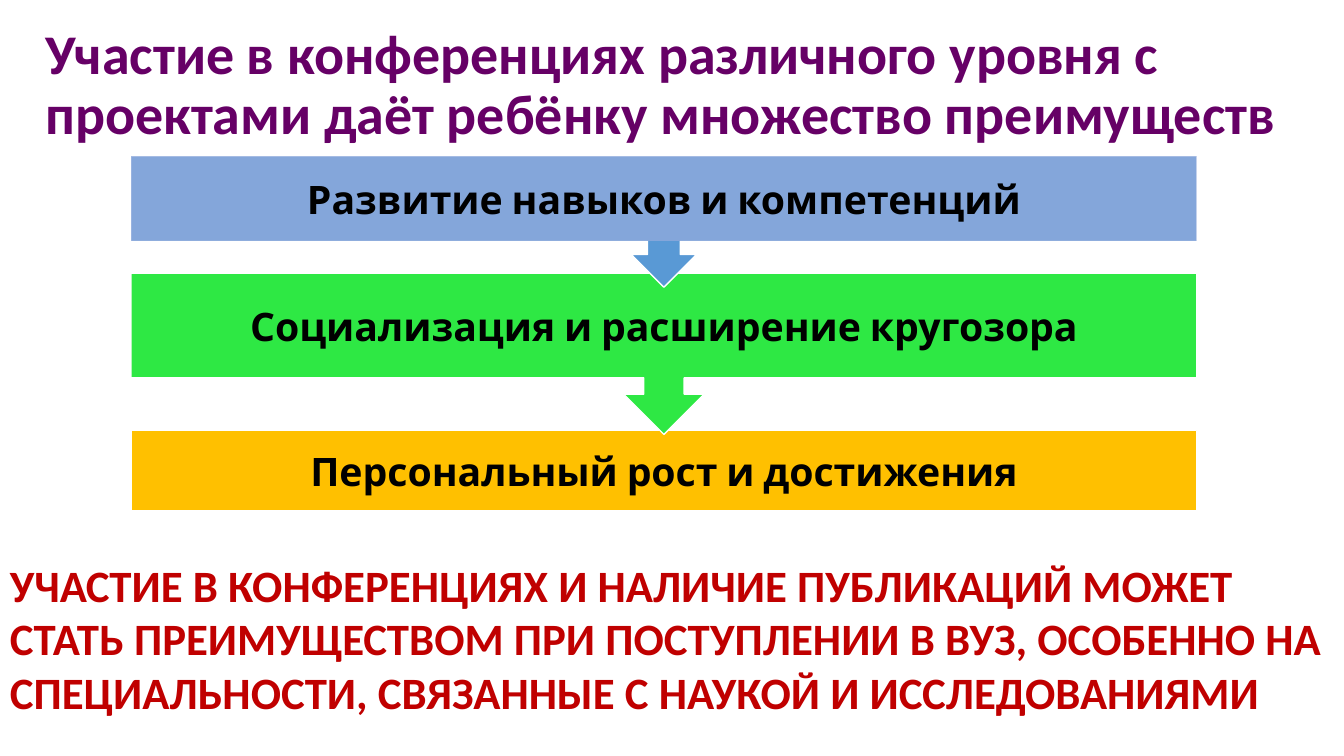
from dataclasses import dataclass
from pptx import Presentation
from pptx.dml.color import RGBColor
from pptx.enum.shapes import MSO_SHAPE
from pptx.enum.text import MSO_ANCHOR, MSO_AUTO_SIZE, PP_ALIGN
from pptx.oxml import parse_xml
from pptx.oxml.ns import nsdecls
from pptx.shapes.autoshape import Shape
from pptx.slide import Slide
from pptx.text.text import TextFrame
from pptx.util import Inches, Length, Pt

LEFT = 13
WIDTH = 105.7


@dataclass
class Step:
    top: float
    height: float
    kind: MSO_SHAPE
    fill: str
    text: str = ""
    alpha: int = 100


@dataclass
class Note:
    left: float
    top: float
    width: float
    height: float
    size: int
    color: str
    spacing: float
    fit: MSO_AUTO_SIZE
    text: str


STEPS = [
    Step(42.7, 8, MSO_SHAPE.RECTANGLE, "FFC000",
         "Персональный рост и достижения"),
    Step(27.1, 16, MSO_SHAPE.DOWN_ARROW_CALLOUT, "2EE844",
         "Социализация и расширение кругозора"),
    Step(15.5, 13, MSO_SHAPE.DOWN_ARROW_CALLOUT, "5999D5"),
    Step(15.5, 8.4, MSO_SHAPE.RECTANGLE, "8FAADC",
         "Развитие навыков и компетенций", 80),
]

TITLE = Note(3.5, 2.1, 127.1, 47.6, 40, "660066", 0.9, MSO_AUTO_SIZE.NONE,
             "Участие в конференциях различного уровня с проектами "
             "даёт ребёнку множество преимуществ")
CLOSING = Note(0, 54.8, 135.5, 20.2, 32, "C00000", 1.0,
               MSO_AUTO_SIZE.SHAPE_TO_FIT_TEXT,
               "УЧАСТИЕ В КОНФЕРЕНЦИЯХ И НАЛИЧИЕ ПУБЛИКАЦИЙ МОЖЕТ СТАТЬ "
               "ПРЕИМУЩЕСТВОМ ПРИ ПОСТУПЛЕНИИ В ВУЗ, ОСОБЕННО НА "
               "СПЕЦИАЛЬНОСТИ, СВЯЗАННЫЕ С НАУКОЙ И ИССЛЕДОВАНИЯМИ")


def grid(count: float) -> Length:
    return Inches(count / 10)


def paint(code: str) -> RGBColor:
    return RGBColor.from_string(code)


def write(frame: TextFrame, text: str, face: str, size: int, color: str) -> None:
    frame.text = text
    frame.word_wrap = True
    font = frame.paragraphs[0].runs[0].font
    font.name = face
    font.size = Pt(size)
    font.bold = True
    font.color.rgb = paint(color)


def fade(shape: Shape, alpha: int) -> None:
    color = shape.fill._xPr.find(".//{*}srgbClr")
    color.append(parse_xml(f'<a:alpha {nsdecls("a")} val="{alpha * 1000}"/>'))


def draw_step(slide: Slide, step: Step) -> None:
    shape = slide.shapes.add_shape(
        step.kind, grid(LEFT), grid(step.top), grid(WIDTH), grid(step.height))
    shape.shadow.inherit = False
    shape.fill.solid()
    shape.fill.fore_color.rgb = paint(step.fill)
    if step.kind == MSO_SHAPE.DOWN_ARROW_CALLOUT:
        for index, share in enumerate((0.25, 0.25, 0.25, 0.65)):
            shape.adjustments[index] = share
    if step.alpha < 100:
        fade(shape, step.alpha)
        shape.line.fill.background()
    else:
        shape.line.color.rgb = paint("FFFFFF")
        shape.line.width = Pt(1)
    if step.text:
        frame = shape.text_frame
        write(frame, step.text, "Cabin", 28, "000000")
        frame.vertical_anchor = MSO_ANCHOR.MIDDLE
        frame.margin_left = frame.margin_right = grid(1.6)
        frame.margin_top = frame.margin_bottom = grid(1.6)
        frame.paragraphs[0].alignment = PP_ALIGN.CENTER


def draw_note(slide: Slide, note: Note) -> None:
    box = slide.shapes.add_textbox(
        grid(note.left), grid(note.top), grid(note.width), grid(note.height))
    frame = box.text_frame
    write(frame, note.text, "Calibri", note.size, note.color)
    frame.auto_size = note.fit
    frame.paragraphs[0].line_spacing = note.spacing


def main() -> None:
    deck = Presentation()
    deck.slide_width = Inches(13.33)
    deck.slide_height = Inches(7.5)
    slide = deck.slides.add_slide(deck.slide_layouts[6])
    draw_note(slide, TITLE)
    for step in STEPS:
        draw_step(slide, step)
    draw_note(slide, CLOSING)
    deck.save("out.pptx")


if __name__ == "__main__":
    main()
